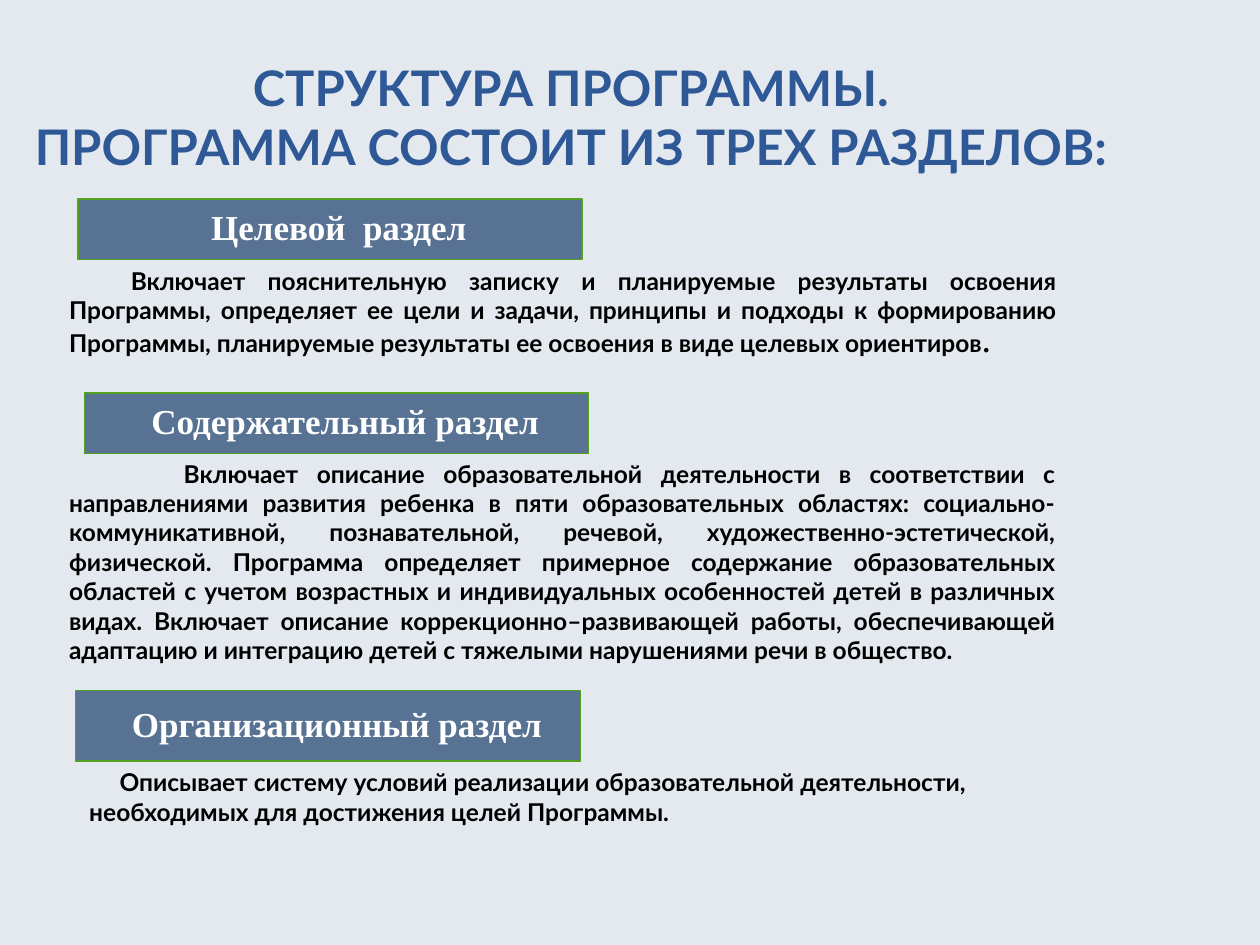
from pptx import Presentation
from pptx.dml.color import RGBColor
from pptx.enum.shapes import MSO_SHAPE as Shape
from pptx.enum.text import MSO_ANCHOR as Anchor, PP_ALIGN as Align
from pptx.util import Inches, Pt

COLUMNS, ROWS = 100, 75  # grid of 0.1 inch cells on a 10 x 7.5 inch slide


def color(hex_string):
    return RGBColor.from_string(hex_string)


def set_attributes(target, values):
    for name, value in values.items():
        setattr(target, name, value)


class SlideBuilder:
    BACKGROUND, BAR, BAR_LINE = "E4E9EF", "577293", "54A021"
    TITLE = {"name": "Lato", "size": Pt(28), "bold": True, "color": "2F5897"}
    HEADING = {"name": "Times New Roman", "size": Pt(20), "bold": True, "color": "FFFFFF"}
    BODY = {"name": "Lato", "size": Pt(14), "bold": True, "color": "000000"}
    FULL_STOP = {**BODY, "name": "Times New Roman", "size": Pt(16)}

    def __init__(self, presentation):
        self.cell_width = presentation.slide_width / COLUMNS
        self.cell_height = presentation.slide_height / ROWS
        self.slide = presentation.slides.add_slide(presentation.slide_layouts[6])
        fill = self.slide.background.fill
        fill.solid()
        fill.fore_color.rgb = color(self.BACKGROUND)

    def place(self, column, row, width, height):
        return (round(column * self.cell_width), round(row * self.cell_height),
                round(width * self.cell_width), round(height * self.cell_height))

    def add_text(self, paragraph, text, style):
        run = paragraph.add_run()
        run.text = text
        set_attributes(run.font, {k: v for k, v in style.items() if k != "color"})
        run.font.color.rgb = color(style["color"])

    def title(self, lines, *cells):
        box = self.slide.shapes.add_textbox(*self.place(*cells))
        set_attributes(box.text_frame, {
            "word_wrap": True, "vertical_anchor": Anchor.BOTTOM,
            "margin_left": Inches(0.05), "margin_right": Inches(0.05),
            "margin_top": 0, "margin_bottom": 0})
        paragraph = box.text_frame.paragraphs[0]
        paragraph.alignment = Align.CENTER
        for index, line in enumerate(lines):
            if index:
                paragraph.add_line_break()
            self.add_text(paragraph, line, self.TITLE)

    def heading(self, text, *cells):
        bar = self.slide.shapes.add_shape(Shape.RECTANGLE, *self.place(*cells))
        bar.shadow.inherit = False
        bar.fill.solid()
        bar.fill.fore_color.rgb = color(self.BAR)
        bar.line.color.rgb = color(self.BAR_LINE)
        bar.line.width = Pt(0.75)
        margin = Inches(0.04)
        set_attributes(bar.text_frame, {
            "word_wrap": True, "vertical_anchor": Anchor.MIDDLE,
            "margin_left": Inches(0.18), "margin_right": margin,
            "margin_top": margin, "margin_bottom": margin})
        paragraph = bar.text_frame.paragraphs[0]
        set_attributes(paragraph, {"alignment": Align.CENTER, "line_spacing": 0.9})
        self.add_text(paragraph, text, self.HEADING)

    def body(self, text, indent, alignment, cells, ending=""):
        box = self.slide.shapes.add_textbox(*self.place(*cells))
        box.text_frame.word_wrap = True
        paragraph = box.text_frame.paragraphs[0]
        paragraph.alignment = alignment
        # First-line indent
        properties = paragraph._p.get_or_add_pPr()
        properties.set("marL", "0")
        properties.set("indent", str(Inches(indent)))
        self.add_text(paragraph, text, self.BODY)
        if ending:
            self.add_text(paragraph, ending, self.FULL_STOP)


def main():
    presentation = Presentation()
    presentation.slide_width, presentation.slide_height = Inches(10), Inches(7.5)
    builder = SlideBuilder(presentation)

    # Title
    builder.title(["СТРУКТУРА ПРОГРАММЫ.", "ПРОГРАММА СОСТОИТ ИЗ ТРЕХ РАЗДЕЛОВ:"],
                  2, 3.5, 86.6, 10.4)

    # Target section
    builder.heading("Целевой  раздел", 6.2, 15.8, 40, 4.8)
    builder.body(
        "Включает пояснительную записку и планируемые результаты освоения Программы, "
        "определяет ее цели и задачи, принципы и подходы к формированию Программы, "
        "планируемые результаты ее освоения в виде целевых ориентиров",
        0.49, Align.JUSTIFY, (4.5, 20.6, 80.4, 10.8), ending=".")

    # Content section
    builder.heading("Содержательный раздел", 6.7, 31.2, 40, 4.8)
    builder.body(
        "Включает описание образовательной деятельности в соответствии с направлениями "
        "развития ребенка в пяти образовательных областях: социально-коммуникативной, "
        "познавательной, речевой, художественно-эстетической, физической. Программа "
        "определяет примерное содержание образовательных областей с учетом возрастных и "
        "индивидуальных особенностей детей в различных видах. Включает описание "
        "коррекционно–развивающей работы, обеспечивающей адаптацию и интеграцию детей "
        "с тяжелыми нарушениями речи в общество.",
        0.91, Align.JUSTIFY, (4.5, 35.9, 80.3, 19.9))

    # Organisational section
    builder.heading("Организационный раздел", 6, 54.8, 40.1, 5.6)
    builder.body(
        "Описывает систему условий реализации образовательной деятельности, "
        "необходимых для достижения целей Программы.",
        0.24, Align.LEFT, (6.1, 60.4, 80.1, 5.7))

    presentation.save("out.pptx")


if __name__ == "__main__":
    main()
